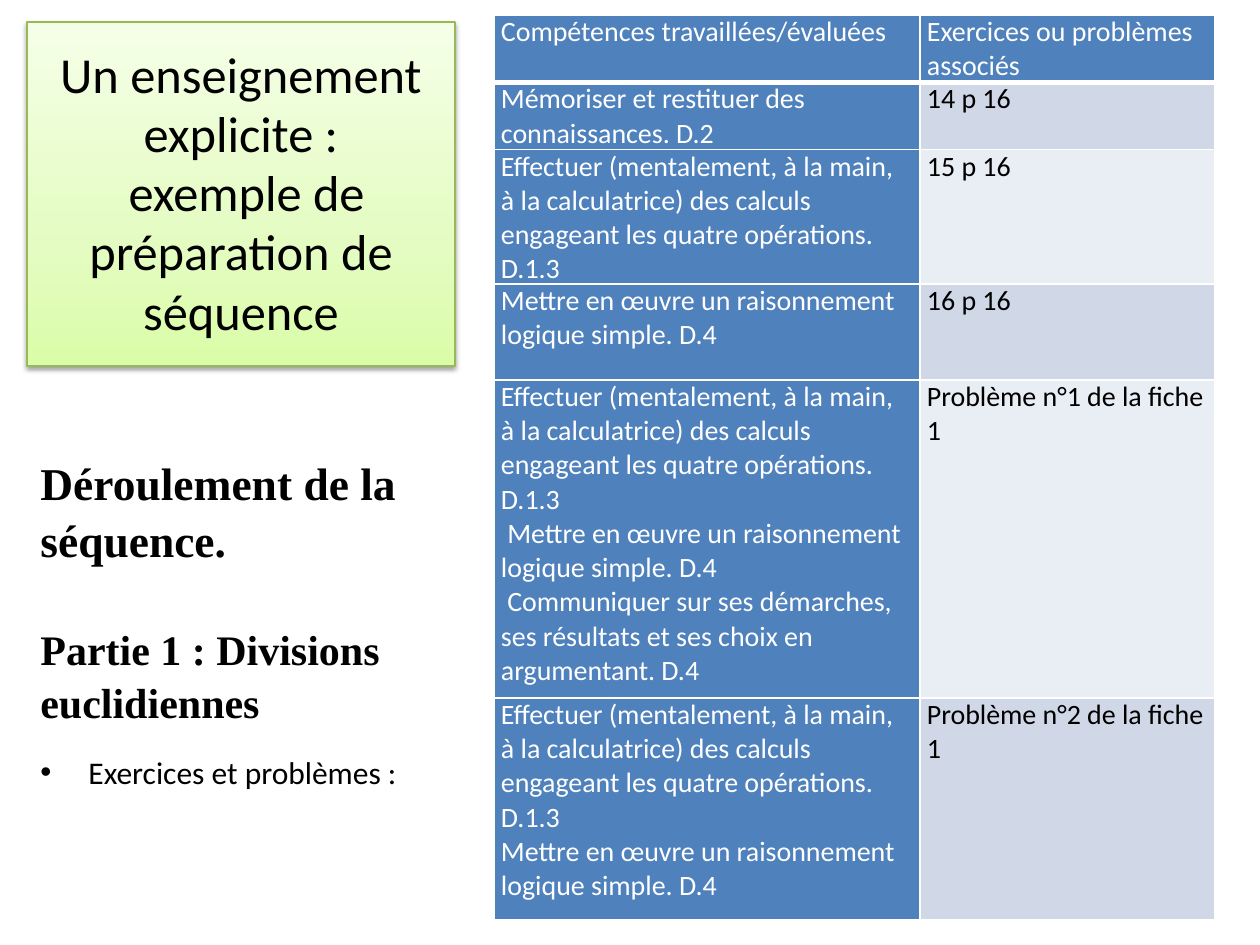
import copy
from dataclasses import dataclass

import pptx
import pptx.dml.color
import pptx.enum.text
import pptx.oxml
import pptx.oxml.ns
import pptx.util

SCALE = 914400 // 126  # EMU in one px
HUES = {
    "black": "000000", "white": "FFFFFF", "blue": "4F81BD",
    "dark": "D0D8E8", "pale": "E9EDF4", "edge": "98B955",
}
GREENS = [(0, "DAFDA7"), (0.35, "E4FCC2"), (1, "F5FFE7")]
NS = pptx.oxml.ns.nsdecls("a")
Pt = pptx.util.Pt

CALC = ("Effectuer (mentalement, à la main, à la calculatrice) des calculs "
        "engageant les quatre opérations. D.1.3")
LOGIC = "Mettre en œuvre un raisonnement logique simple. D.4"
TALK = "Communiquer sur ses démarches, ses résultats et ses choix en argumentant. D.4"


@dataclass
class Row:
    high: int
    skill: str
    task: str


@dataclass
class Line:
    text: str
    size: float
    font: str
    bold: bool = False
    gap: float = 0
    dot: bool = False


ROWS = [
    Row(63, "Compétences travaillées/évaluées", "Exercices ou problèmes associés"),
    Row(63, "Mémoriser et restituer des connaissances. D.2", "14 p 16"),
    Row(127, CALC, "15 p 16"),
    Row(96, LOGIC, "16 p 16"),
    Row(318, f"{CALC}\n {LOGIC}\n {TALK}", "Problème n°1 de la fiche 1"),
    Row(222, f"{CALC}\n{LOGIC}", "Problème n°2 de la fiche 1"),
]
WIDTHS = [426, 295]
LINES = [
    Line("Déroulement de la séquence.", 26, "Times New Roman", True),
    Line("Partie 1 : Divisions euclidiennes", 24, "Times New Roman", True, 31),
    Line("Exercices et problèmes :", 18, "Calibri", gap=14, dot=True),
]


def px(n: int) -> int:
    return n * SCALE


def rgb(code: str) -> pptx.dml.color.RGBColor:
    return pptx.dml.color.RGBColor.from_string(code)


def style(para, size: float, face: str, hue: str, bold: bool = False) -> None:
    for run in para.runs:
        font = run.font
        font.size, font.name, font.bold = Pt(size), face, bold
        font.color.rgb = rgb(HUES[hue])


def place(shape, left: int, top: int, wide: int, high: int) -> None:
    shape.left, shape.top = px(left), px(top)
    shape.width, shape.height = px(wide), px(high)


def draw_text(slide, lines: list[Line]) -> None:
    box = slide.shapes.add_textbox(px(28), px(446), px(446), px(344))
    frame = box.text_frame
    frame.word_wrap = True
    frame.text = "\n".join(line.text for line in lines)
    for para, line in zip(frame.paragraphs, lines):
        para.line_spacing = 1.05
        para.space_before = Pt(line.gap)
        style(para, line.size, line.font, "black", line.bold)
        if line.dot:
            props = para._p.get_or_add_pPr()
            props.set("marL", str(px(48)))
            props.set("indent", str(-px(48)))
            for tag in ('<a:buFont {} typeface="Arial"/>', '<a:buChar {} char="•"/>'):
                props.append(pptx.oxml.parse_xml(tag.format(NS)))


def draw_cell(cell, text: str, fill: str, hue: str, base: int) -> None:
    cell.margin_left = cell.margin_right = px(7)
    cell.margin_top = cell.margin_bottom = 0
    props = cell._tc.get_or_add_tcPr()
    for side, width in (("L", 1), ("R", 1), ("T", 1), ("B", base)):
        props.append(pptx.oxml.parse_xml(
            f'<a:ln{side} {NS} w="{Pt(width)}"><a:solidFill>'
            f'<a:srgbClr val="{HUES["white"]}"/></a:solidFill></a:ln{side}>'))
    cell.fill.solid()
    cell.fill.fore_color.rgb = rgb(HUES[fill])
    cell.text_frame.text = text
    for para in cell.text_frame.paragraphs:
        style(para, 16, "Calibri", hue)


def draw_table(slide, rows: list[Row]) -> None:
    high = sum(row.high for row in rows)
    grid = slide.shapes.add_table(
        len(rows), 2, px(494), px(15), px(sum(WIDTHS)), px(high)).table
    grid.first_row = grid.horz_banding = False
    for col, wide in zip(grid.columns, WIDTHS):
        col.width = px(wide)
    for i, row in enumerate(rows):
        grid.rows[i].height = px(row.high)
        head = i == 0
        base = 3 if head else 1
        band = "blue" if head else "dark" if i % 2 else "pale"
        draw_cell(grid.cell(i, 0), row.skill, "blue", "white", base)
        draw_cell(grid.cell(i, 1), row.task, band, "white" if head else "black", base)


def draw_title(slide) -> None:
    title = slide.shapes.title
    place(title, 27, 22, 428, 344)
    # Three-stop green fill, light at the top
    title.fill.gradient()
    title.fill.gradient_angle = 90
    stops = title._element.spPr.find(".//" + pptx.oxml.ns.qn("a:gsLst"))
    stops.insert(1, copy.deepcopy(stops[0]))
    for stop, (spot, code) in zip(title.fill.gradient_stops, GREENS):
        stop.position = spot
        stop.color.rgb = rgb(code)
    title.line.color.rgb = rgb(HUES["edge"])
    title.line.width = Pt(0.75)
    # Soft shadow below
    title._element.spPr.append(pptx.oxml.parse_xml(
        f'<a:effectLst {NS}><a:outerShdw blurRad="{Pt(3.1)}" dist="{Pt(1.6)}" '
        f'dir="5400000" rotWithShape="0"><a:srgbClr val="{HUES["black"]}">'
        '<a:alpha val="38000"/></a:srgbClr></a:outerShdw></a:effectLst>'))
    frame = title.text_frame
    frame.text = "Un enseignement explicite :\v exemple de préparation de séquence"
    frame.word_wrap = True
    frame.auto_size = pptx.enum.text.MSO_AUTO_SIZE.NONE
    frame.vertical_anchor = pptx.enum.text.MSO_ANCHOR.MIDDLE
    para = frame.paragraphs[0]
    para.alignment = pptx.enum.text.PP_ALIGN.CENTER
    para.line_spacing = 0.98
    style(para, 28.8, "Calibri", "black")
    # Bring to the front
    slide.shapes._spTree.append(title._element)


def main() -> None:
    deck = pptx.Presentation()
    deck.slide_width, deck.slide_height = px(1260), px(945)
    slide = deck.slides.add_slide(deck.slide_layouts[5])
    draw_text(slide, LINES)
    draw_table(slide, ROWS)
    draw_title(slide)
    deck.save("out.pptx")


if __name__ == "__main__":
    main()
